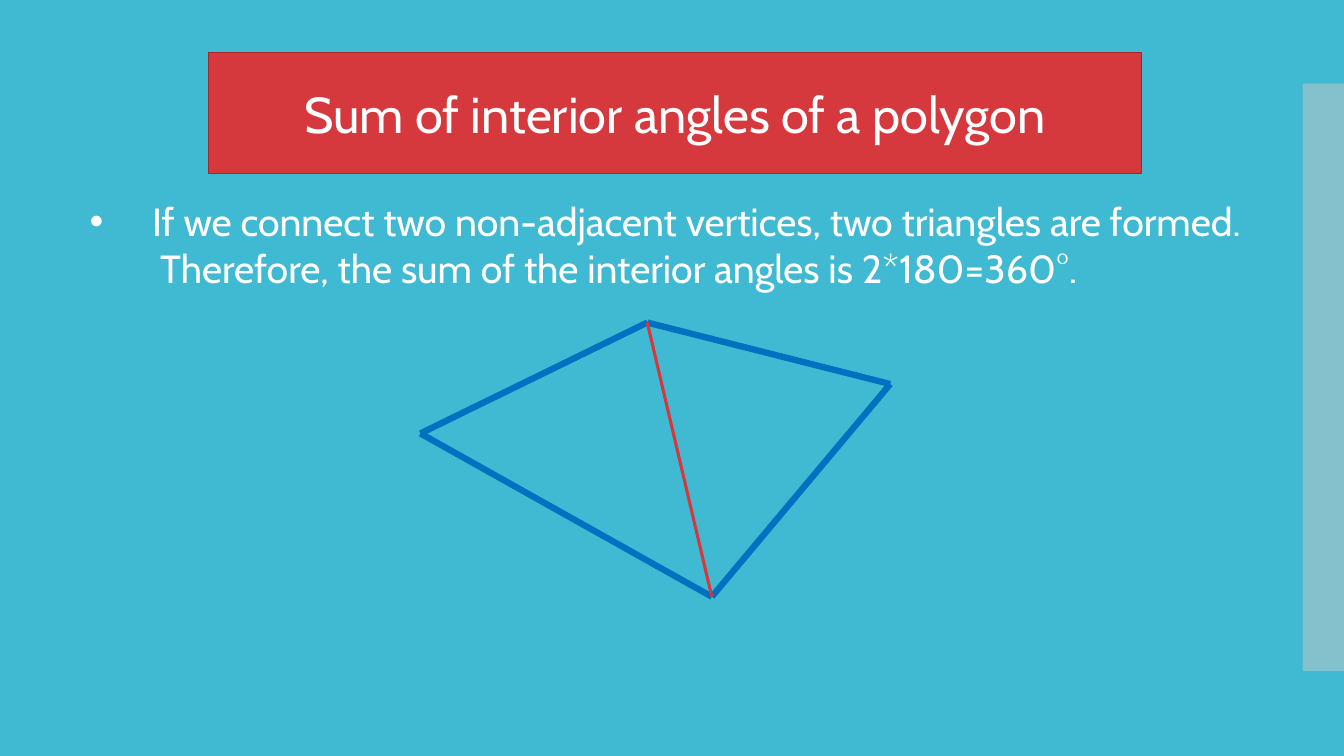
from dataclasses import dataclass

from lxml import etree
from pptx import Presentation
from pptx import util as u
from pptx.dml import color as dml
from pptx.enum import shapes, text
from pptx.oxml import ns

FONT = "Cabin"
WHITE, RED, BLUE = "FFFFFF", "D5393D", "0070C0"


@dataclass(frozen=True)
class Point:
    x: float
    y: float


@dataclass(frozen=True)
class Segment:
    start: Point
    end: Point
    color: str = BLUE
    width: float = 4.5


@dataclass(frozen=True)
class BodyLine:
    content: str
    margin: float
    indent: float = 0
    bullet: str = ""


LEFT, TOP = Point(4.17, 4.3), Point(6.42, 3.2)
RIGHT, BOTTOM = Point(8.83, 3.81), Point(7.06, 5.92)
CORNERS = [BOTTOM, LEFT, TOP, RIGHT]
SIDES = [Segment(a, b) for a, b in zip(CORNERS, CORNERS[1:] + CORNERS[:1])]
DIAGONAL = Segment(TOP, BOTTOM, RED, 2.25)

BODY_LINES = [
    BodyLine("If we connect two non-adjacent vertices, two triangles are formed.",
             0.62, -0.62, "•"),
    BodyLine("Therefore, the sum of the interior angles is 2*180=360°.", 0.7),
]


def rgb(value: str) -> dml.RGBColor:
    return dml.RGBColor.from_string(value)


def add_rectangle(slide, left: float, top: float, width: float, height: float, fill: str):
    shape = slide.shapes.add_shape(
        shapes.MSO_SHAPE.RECTANGLE,
        u.Inches(left), u.Inches(top), u.Inches(width), u.Inches(height))
    shape.shadow.inherit = False
    shape.fill.solid()
    shape.fill.fore_color.rgb = rgb(fill)
    shape.line.fill.background()
    return shape


def add_run(paragraph, content: str, size: float) -> None:
    run = paragraph.add_run()
    run.text = content
    run.font.name = FONT
    run.font.size = u.Pt(size)
    run.font.color.rgb = rgb(WHITE)


def add_segment(slide, segment: Segment) -> None:
    connector = slide.shapes.add_connector(
        shapes.MSO_CONNECTOR.STRAIGHT,
        u.Inches(segment.start.x), u.Inches(segment.start.y),
        u.Inches(segment.end.x), u.Inches(segment.end.y))
    connector.line.color.rgb = rgb(segment.color)
    connector.line.width = u.Pt(segment.width)
    etree.SubElement(connector.element.spPr, ns.qn("a:effectLst"))


def add_side_panel(slide) -> None:
    panel = add_rectangle(slide, 12.92, 0.83, 0.42, 5.83, "C8C8C8")
    fill_color = panel.element.spPr.find(".//" + ns.qn("a:srgbClr"))
    etree.SubElement(fill_color, ns.qn("a:alpha"), val="50000")


def add_title(slide) -> None:
    banner = add_rectangle(slide, 2.07, 0.52, 9.25, 1.2, RED)
    banner.line.color.rgb = rgb("9E2A2D")
    banner.line.width = u.Pt(0.85)
    frame = banner.text_frame
    frame.vertical_anchor = text.MSO_ANCHOR.MIDDLE
    paragraph = frame.paragraphs[0]
    paragraph.alignment = text.PP_ALIGN.CENTER
    add_run(paragraph, "Sum of interior angles of a polygon", 36)


def add_body(slide) -> None:
    box = slide.shapes.add_textbox(
        u.Inches(0.79), u.Inches(1.91), u.Inches(11.82), u.Inches(1.04))
    frame = box.text_frame
    frame.word_wrap = True
    frame.auto_size = text.MSO_AUTO_SIZE.SHAPE_TO_FIT_TEXT
    for index, line in enumerate(BODY_LINES):
        paragraph = frame.add_paragraph() if index else frame.paragraphs[0]
        add_run(paragraph, line.content, 28)
        properties = paragraph._p.get_or_add_pPr()
        properties.set("marL", str(u.Inches(line.margin)))
        properties.set("indent", str(u.Inches(line.indent)))
        if line.bullet:
            etree.SubElement(properties, ns.qn("a:buFont"), typeface="Arial")
            etree.SubElement(properties, ns.qn("a:buChar"), char=line.bullet)


def main() -> None:
    presentation = Presentation()
    presentation.slide_width = u.Inches(13.33)
    presentation.slide_height = u.Inches(7.5)
    slide = presentation.slides.add_slide(presentation.slide_layouts[6])

    # Background and side panel
    slide.background.fill.solid()
    slide.background.fill.fore_color.rgb = rgb("40BAD2")
    add_side_panel(slide)

    # Title and explanation
    add_title(slide)
    add_body(slide)

    # Quadrilateral split by its diagonal
    for segment in [*SIDES, DIAGONAL]:
        add_segment(slide, segment)

    presentation.save("out.pptx")


if __name__ == "__main__":
    main()
